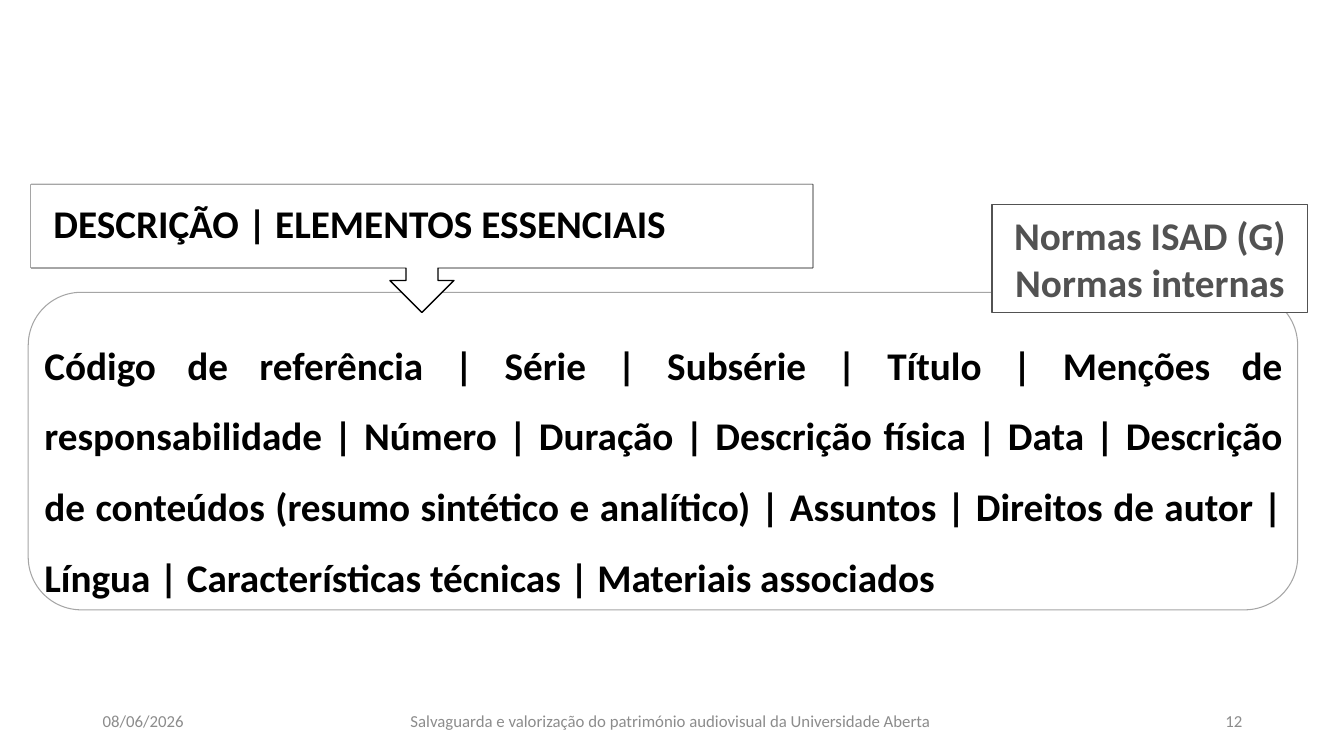
from lxml import etree
from pptx import Presentation
from pptx.dml.color import RGBColor
from pptx.enum.shapes import MSO_SHAPE
from pptx.enum.text import MSO_ANCHOR, MSO_AUTO_SIZE, PP_ALIGN
from pptx.oxml.ns import qn
from pptx.util import Inches, Pt

COLORS = {
    "white": "FFFFFF",
    "black": "000000",
    "panel_line": "A5A5A5",
    "standards": "525252",
    "footer": "8C8C8C",
}
STRONG = {"name": "Calibri", "size": Pt(28), "bold": True}
SMALL = {"name": "Calibri", "size": Pt(12), "bold": False}
MARGIN_NAMES = ("margin_left", "margin_top", "margin_right", "margin_bottom")


def color(name):
    return RGBColor.from_string(COLORS[name])


def place(shape, box):
    for name, length in zip(("left", "top", "width", "height"), box):
        setattr(shape, name, Inches(length))


def set_text(shape, lines, font, color_name, align, anchor=MSO_ANCHOR.MIDDLE, spacing=1.0):
    frame = shape.text_frame
    frame_format = {"word_wrap": True, "auto_size": MSO_AUTO_SIZE.NONE, "vertical_anchor": anchor}
    for name, value in frame_format.items():
        setattr(frame, name, value)
    frame.text = "\n".join(lines)
    paragraph_format = {"alignment": align, "line_spacing": spacing, "space_before": Pt(0)}
    for paragraph in frame.paragraphs:
        for name, value in paragraph_format.items():
            setattr(paragraph, name, value)
        for run in paragraph.runs:
            for name, value in font.items():
                setattr(run.font, name, value)
            run.font.color.rgb = color(color_name)


def add_outline(slide, kind, box, line, width, fill=None):
    """Add a preset shape with a plain outline and an optional fill."""
    shape = slide.shapes.add_shape(kind, *map(Inches, box))
    shape.shadow.inherit = False
    if fill:
        shape.fill.solid()
        shape.fill.fore_color.rgb = color(fill)
    else:
        shape.fill.background()
    shape.line.color.rgb = color(line)
    shape.line.width = Pt(width)
    return shape


def build_elements_panel(slide, box):
    left, top, width, height = box
    add_outline(slide, MSO_SHAPE.ROUNDED_RECTANGLE, box, "panel_line", 0.75)
    body = slide.placeholders[1]
    place(body, (left + 0.06, top + 0.2, width - 0.11, height - 0.29))
    text = (
        "Código de referência | Série | Subsérie | Título | Menções de responsabilidade | "
        "Número | Duração | Descrição física | Data | Descrição de conteúdos "
        "(resumo sintético e analítico) | Assuntos | Direitos de autor | Língua | "
        "Características técnicas | Materiais associados"
    )
    set_text(body, [text], STRONG, "black", PP_ALIGN.JUSTIFY, MSO_ANCHOR.TOP, 1.5)
    properties = body.text_frame.paragraphs[0]._p.get_or_add_pPr()
    properties.set("marL", "0")
    properties.set("indent", "0")
    etree.SubElement(properties, qn("a:buNone"))


def build_heading(slide, box):
    """Place the title on a callout whose arrow points down to the panel."""
    left, top, width, height = box
    callout = add_outline(slide, MSO_SHAPE.UP_ARROW_CALLOUT, box, "black", 1, "white")
    callout.rotation = 180
    title = slide.shapes.title
    place(title, (left, top, width, height * 0.65))
    title.fill.solid()
    title.fill.fore_color.rgb = color("white")
    set_text(title, ["DESCRIÇÃO | ELEMENTOS ESSENCIAIS"], STRONG, "black", PP_ALIGN.LEFT, spacing=0.9)
    for name in MARGIN_NAMES:
        setattr(title.text_frame, name, Inches(0.22))
    callout._element.addnext(title._element)


def build_standards(slide, box):
    shape = add_outline(slide, MSO_SHAPE.RECTANGLE, box, "standards", 1, "white")
    set_text(shape, ["Normas ISAD (G)", "Normas internas"], STRONG, "standards", PP_ALIGN.CENTER)


def build_footer(slide, box):
    left, top, width, height = box
    side = 3
    parts = (
        ("08/06/2026", left, side, PP_ALIGN.LEFT),
        ("Salvaguarda e valorização do património audiovisual da Universidade Aberta ",
         left + 2.21, 7.08, PP_ALIGN.CENTER),
        ("12", left + width - side, side, PP_ALIGN.RIGHT),
    )
    for text, part_left, part_width, align in parts:
        part_box = (part_left, top, part_width, height)
        shape = slide.shapes.add_textbox(*map(Inches, part_box))
        set_text(shape, [text], SMALL, "footer", align)


def main():
    presentation = Presentation()
    presentation.slide_width = Inches(13.33)
    presentation.slide_height = Inches(7.5)
    slide = presentation.slides.add_slide(presentation.slide_layouts[1])
    build_footer(slide, (0.92, 6.95, 11.5, 0.4))
    build_elements_panel(slide, (0.28, 2.9, 12.59, 3.15))
    build_heading(slide, (0.31, 1.83, 7.75, 1.27))
    build_standards(slide, (9.84, 2.03, 3.13, 1.07))
    presentation.save("out.pptx")


if __name__ == "__main__":
    main()
